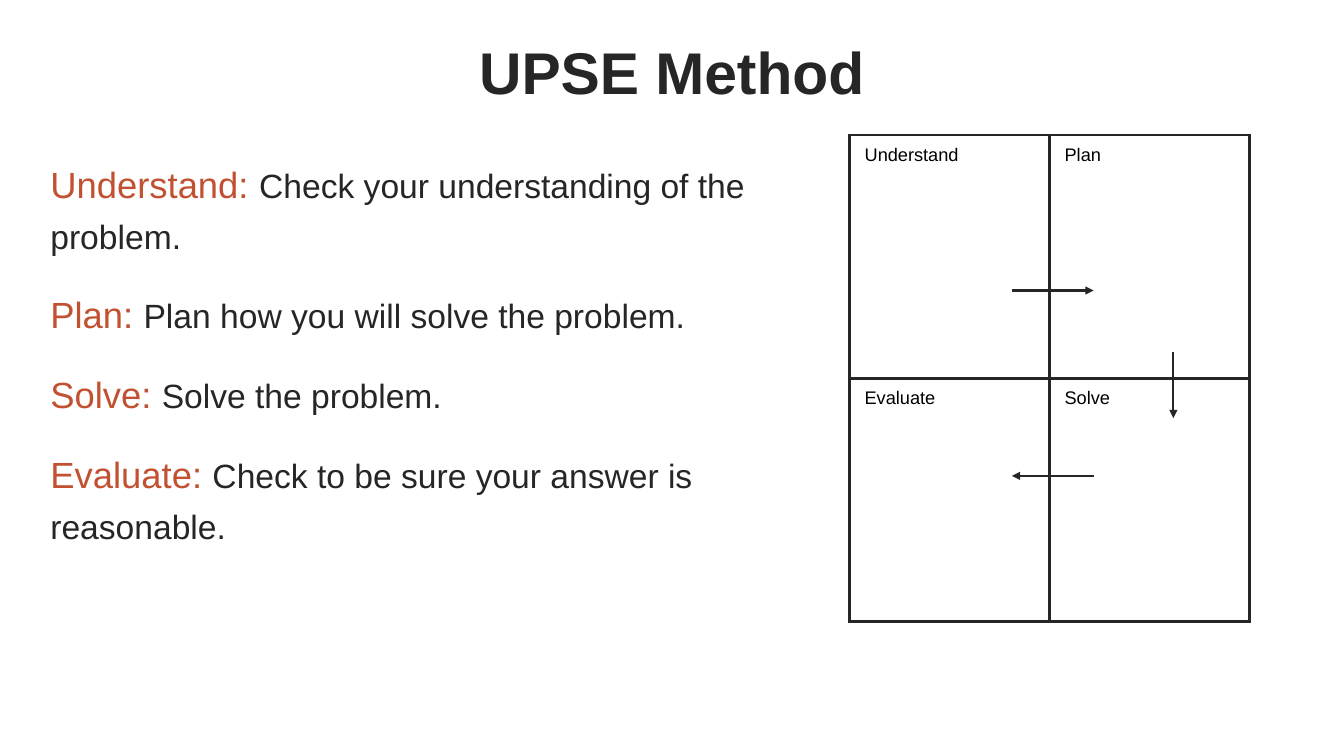
"""Build the UPSE Method slide."""
from dataclasses import dataclass

from lxml.etree import SubElement
from pptx import Presentation
from pptx.dml.color import RGBColor
from pptx.enum.shapes import MSO_CONNECTOR
from pptx.enum.text import MSO_ANCHOR, MSO_AUTO_SIZE, PP_ALIGN
from pptx.oxml.ns import qn
from pptx.util import Cm, Pt


@dataclass(frozen=True)
class Theme:
    """Hold the colours, type sizes and line widths."""
    font: str = "Arial"
    dark: str = "262626"
    rust: str = "C25131"
    black: str = "000000"
    head: int = 42
    term: int = 26
    text: int = 24
    label: int = 13
    border: float = 2.25
    arrow: float = 1.5


def apply(item, values):
    """Set each named value on the item."""
    for name, value in values.items():
        setattr(item, name, value)


class Deck:
    """Draw styled parts on the current slide."""

    def __init__(self, theme):
        """Open a wide deck with one slide."""
        self.theme = theme
        self.file = Presentation()
        apply(self.file, {"slide_width": Cm(33.87), "slide_height": Cm(19.05)})
        self.slide = self.file.slides.add_slide(self.file.slide_layouts[1])

    def run(self, para, text, size, color, bold=False):
        """Add a styled run to a paragraph."""
        run = para.add_run()
        run.text = text
        apply(run.font, {"name": self.theme.font, "size": Pt(size), "bold": bold})
        run.font.color.rgb = RGBColor.from_string(color)

    def place(self, shape, box, anchor):
        """Move a placeholder and return its text frame."""
        apply(shape, dict(zip(("left", "top", "width", "height"), map(Cm, box))))
        frame = shape.text_frame
        apply(frame, {"margin_left": 0, "margin_top": 0, "margin_right": 0,
                      "margin_bottom": 0, "word_wrap": True,
                      "auto_size": MSO_AUTO_SIZE.NONE, "vertical_anchor": anchor})
        return frame

    def title(self, text, box):
        """Fill the title."""
        para = self.place(self.slide.shapes.title, box, MSO_ANCHOR.MIDDLE).paragraphs[0]
        para.alignment = PP_ALIGN.CENTER
        self.run(para, text, self.theme.head, self.theme.dark, True)

    def steps(self, items, box):
        """Fill the body with terms and their meanings."""
        frame = self.place(self.slide.placeholders[1], box, MSO_ANCHOR.TOP)
        for index, (term, text) in enumerate(items):
            para = frame.add_paragraph() if index else frame.paragraphs[0]
            props = para._p.get_or_add_pPr()
            props.set("marL", "0")
            props.set("indent", "0")
            SubElement(props, qn("a:buNone"))
            apply(para, {"alignment": PP_ALIGN.LEFT, "line_spacing": 1.25,
                         "space_before": Pt(18 if index else 0), "space_after": Pt(0)})
            self.run(para, f"{term}: ", self.theme.term, self.theme.rust)
            self.run(para, text, self.theme.text, self.theme.dark)

    def cell(self, cell, text):
        """Write a label and draw the cell borders."""
        apply(cell, {"margin_left": Cm(0.38), "margin_top": Cm(0.25),
                     "margin_right": Cm(0.25), "margin_bottom": Cm(0.25),
                     "vertical_anchor": MSO_ANCHOR.TOP})
        props = cell._tc.get_or_add_tcPr()
        for side in ("lnL", "lnR", "lnT", "lnB"):
            line = SubElement(props, qn(f"a:{side}"), w=str(Pt(self.theme.border)))
            fill = SubElement(line, qn("a:solidFill"))
            SubElement(fill, qn("a:srgbClr"), val=self.theme.dark)
        cell.fill.background()
        self.run(cell.text_frame.paragraphs[0], text, self.theme.label, self.theme.black)

    def grid(self, rows, box):
        """Add a bordered table of labels."""
        table = self.slide.shapes.add_table(len(rows), len(rows[0]), *map(Cm, box)).table
        apply(table, {"first_row": False, "horz_banding": False})
        for r, row in enumerate(rows):
            for c, text in enumerate(row):
                self.cell(table.cell(r, c), text)

    def arrow(self, *ends):
        """Add an arrow from one point to another."""
        arrow = self.slide.shapes.add_connector(MSO_CONNECTOR.STRAIGHT, *map(Cm, ends))
        arrow.line.width = Pt(self.theme.arrow)
        arrow.line.color.rgb = RGBColor.from_string(self.theme.dark)
        SubElement(arrow.line._get_or_add_ln(), qn("a:tailEnd"), type="triangle")
        SubElement(arrow._element.spPr, qn("a:effectLst"))


def main():
    """Build and save the slide."""
    deck = Deck(Theme())
    deck.title("UPSE Method", (1.27, 0, 31.32, 3.56))
    deck.steps([
        ("Understand", "Check your understanding of the problem."),
        ("Plan", "Plan how you will solve the problem."),
        ("Solve", "Solve the problem."),
        ("Evaluate", "Check to be sure your answer is reasonable."),
    ], (1.27, 3.81, 20.14, 10.06))
    deck.grid([("Understand", "Plan"), ("Evaluate", "Solve")], (21.41, 3.4, 10.08, 12.26))
    left, right, down = 25.5, 27.56, 29.57
    deck.arrow(left, 7.32, right, 7.32)
    deck.arrow(down, 8.86, down, 10.54)
    deck.arrow(right, 11.99, left, 11.99)
    deck.file.save("out.pptx")


if __name__ == "__main__":
    main()
